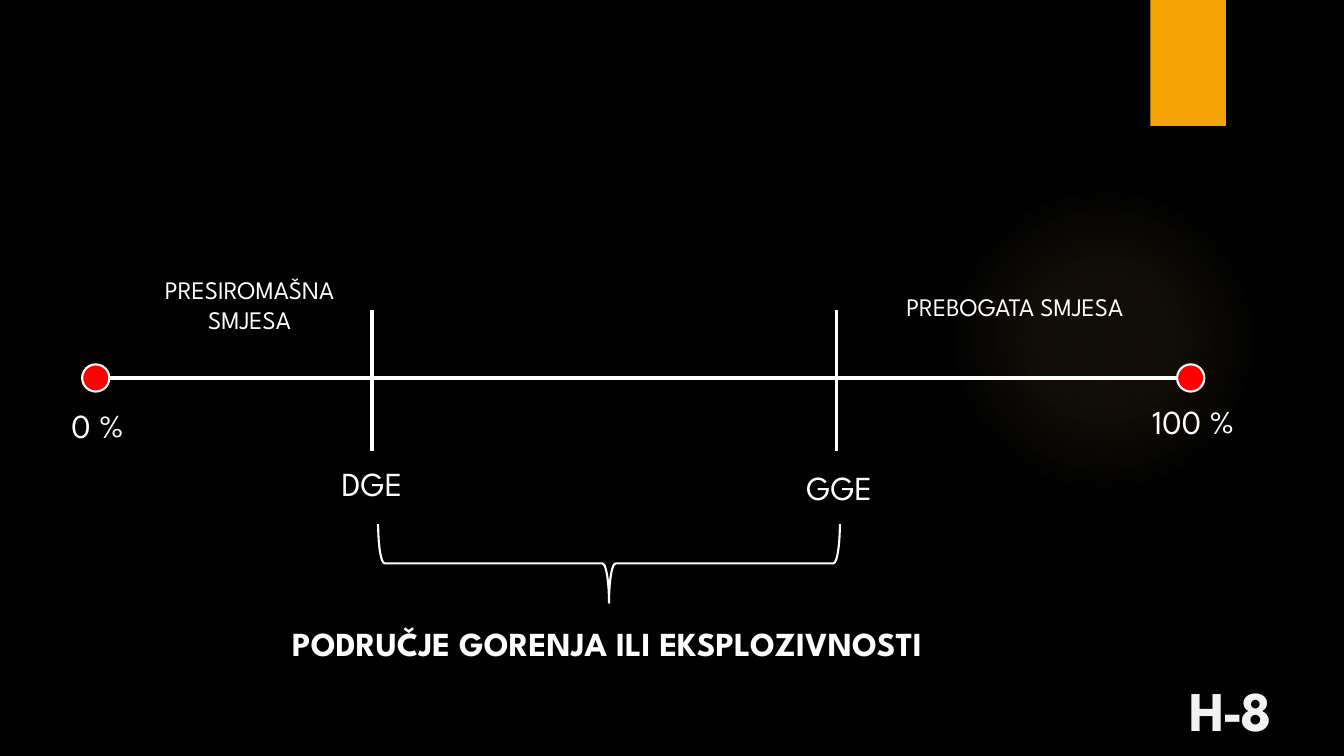
from lxml import etree
from pptx import Presentation
from pptx.dml.color import RGBColor
from pptx.enum.shapes import MSO_CONNECTOR, MSO_SHAPE
from pptx.enum.text import MSO_AUTO_SIZE, PP_ALIGN
from pptx.oxml import parse_xml
from pptx.oxml.ns import qn
from pptx.util import Inches, Pt

OVAL = MSO_SHAPE.OVAL
RECTANGLE = MSO_SHAPE.RECTANGLE
RIGHT_BRACE = MSO_SHAPE.RIGHT_BRACE
STRAIGHT = MSO_CONNECTOR.STRAIGHT
LEFT = PP_ALIGN.LEFT
CENTER = PP_ALIGN.CENTER
FIT_SHAPE = MSO_AUTO_SIZE.SHAPE_TO_FIT_TEXT
NO_FIT = MSO_AUTO_SIZE.NONE

FONT = "League Spartan"
WHITE = "FFFFFF"
DRAWING_NAMESPACE = "http://schemas.openxmlformats.org/drawingml/2006/main"
GLOW_COLOR = "FAC96A"
GLOW_STOPS = [(0, 7), (36, 6), (69, 0)]  # position and opacity in percent


def color(hex_string):
    return RGBColor.from_string(hex_string)


def add_shape(slide, kind, left, top, width, height, fill=None, line=None):
    shape = slide.shapes.add_shape(
        kind, Inches(left), Inches(top), Inches(width), Inches(height))
    shape.shadow.inherit = False
    if fill:
        shape.fill.solid()
        shape.fill.fore_color.rgb = color(fill)
    else:
        shape.fill.background()
    if line:
        shape.line.color.rgb = color(line)
        shape.line.width = Pt(1.5)
    else:
        shape.line.fill.background()
    return shape


def add_line(slide, start_x, start_y, end_x, end_y):
    line = slide.shapes.add_connector(
        STRAIGHT, Inches(start_x), Inches(start_y), Inches(end_x), Inches(end_y))
    line.line.color.rgb = color(WHITE)
    line.line.width = Pt(2.25)
    etree.SubElement(line._element.spPr, qn("a:effectLst"))


def add_label(slide, text, left, top, width, height, size=24, bold=False,
              align=LEFT, hex_color=WHITE, wrap=True):
    box = slide.shapes.add_textbox(
        Inches(left), Inches(top), Inches(width), Inches(height))
    frame = box.text_frame
    frame.text = text
    frame.word_wrap = wrap
    frame.auto_size = FIT_SHAPE if wrap else NO_FIT
    paragraph = frame.paragraphs[0]
    paragraph.alignment = align
    run = paragraph.runs[0]
    run.font.name = FONT
    run.font.size = Pt(size)
    run.font.bold = bold
    run.font.color.rgb = color(hex_color)
    return run


def add_glow(slide, left, top, diameter):
    glow = add_shape(slide, OVAL, left, top, diameter, diameter)
    stops = "".join(
        f'<a:gs pos="{position * 1000}"><a:srgbClr val="{GLOW_COLOR}">'
        f'<a:alpha val="{opacity * 1000}"/></a:srgbClr></a:gs>'
        for position, opacity in GLOW_STOPS)
    gradient = parse_xml(
        f'<a:gradFill xmlns:a="{DRAWING_NAMESPACE}"><a:gsLst>{stops}</a:gsLst>'
        '<a:path path="circle"><a:fillToRect l="50000" t="50000" r="50000" '
        'b="50000"/></a:path></a:gradFill>')
    properties = glow._element.spPr
    properties.replace(properties.find(qn("a:noFill")), gradient)


def add_decoration(slide):
    add_glow(slide, 9.41, 1.83, 3.08)
    add_shape(slide, RECTANGLE, 11.41, 0, 0.75, 1.25, fill="F5A408")


def add_scale(slide, left, middle, width):
    """Concentration axis from 0 to 100 % with both explosive limits."""
    right = left + width
    add_line(slide, left, middle, right, middle)

    # End points
    dot = 0.27
    for center in (left, right):
        add_shape(slide, OVAL, center - dot / 2, middle - dot / 2, dot, dot,
                  fill="FF0000", line=WHITE)
    add_label(slide, "0 %", left - 0.34, middle + 0.22, 2.06, 0.5)
    add_label(slide, "100 %", right - 0.48, middle + 0.18, 1.33, 0.5)

    # Lower and upper limits
    limits = [("DGE", 2.74, 0.79, 1.47), ("GGE", 7.35, 0.83, 3.08)]
    for name, offset, drop, label_width in limits:
        x = left + offset
        add_line(slide, x, middle - 0.67, x, middle + 0.72)
        add_label(slide, name, x - 0.4, middle + drop, label_width, 0.5)

    # Mixtures outside the limits
    add_label(slide, "PRESIROMAŠNA SMJESA", left + 0.31, middle - 1.08,
              2.43, 0.71, size=18, align=CENTER)
    add_label(slide, "PREBOGATA SMJESA", left + 7.94, middle - 0.91,
              3.05, 0.71, size=18)


def add_explosive_range(slide, left, top, width):
    """Brace below the limits, with its caption."""
    depth = 0.78
    brace = add_shape(slide, RIGHT_BRACE, left + (width - depth) / 2,
                      top + (depth - width) / 2, depth, width, line=WHITE)
    brace.rotation = 90
    add_label(slide, "PODRUČJE GORENJA ILI EKSPLOZIVNOSTI",
              left - 0.95, top + 0.93, 7.44, 0.5, bold=True)


def add_page_code(slide, left, top):
    run = add_label(slide, "H-8", left, top, 1.43, 0.71, size=40, bold=True,
                    hex_color="F2F2F2", wrap=False)
    run.font._element.set("spc", "-200")


def main():
    presentation = Presentation()
    presentation.slide_width = Inches(13.33)
    presentation.slide_height = Inches(7.5)
    slide = presentation.slides.add_slide(presentation.slide_layouts[6])
    slide.background.fill.solid()
    slide.background.fill.fore_color.rgb = color("000000")

    add_decoration(slide)
    add_scale(slide, left=0.95, middle=3.75, width=10.86)
    add_explosive_range(slide, left=3.75, top=5.2, width=4.58)
    add_page_code(slide, left=11.7, top=6.65)
    presentation.save("out.pptx")


if __name__ == "__main__":
    main()
